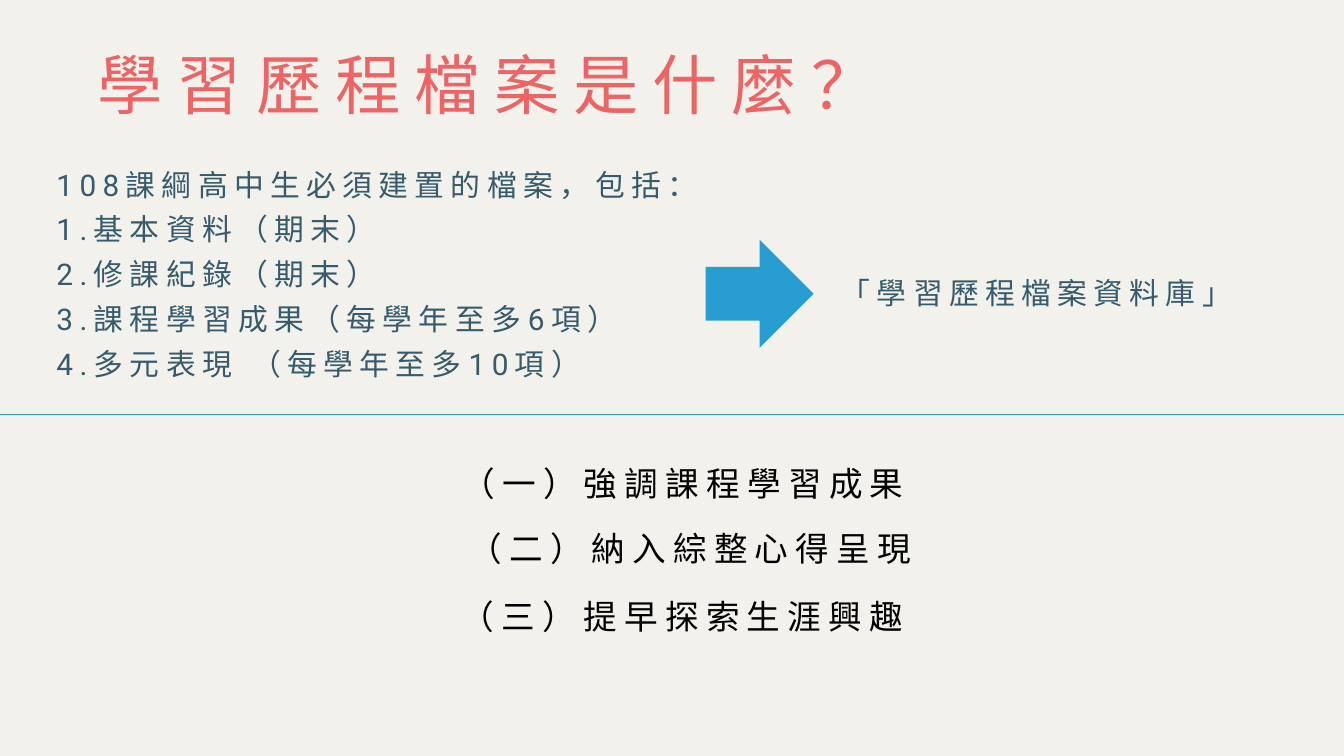
from dataclasses import dataclass

from lxml import etree
from pptx import Presentation
from pptx.dml.color import RGBColor
from pptx.enum.shapes import MSO_CONNECTOR, MSO_SHAPE
from pptx.enum.text import PP_ALIGN
from pptx.oxml.ns import qn
from pptx.slide import Slide
from pptx.util import Inches, Pt

LEFT = PP_ALIGN.LEFT
CENTER = PP_ALIGN.CENTER
RIGHT_ARROW = MSO_SHAPE.RIGHT_ARROW
STRAIGHT = MSO_CONNECTOR.STRAIGHT

COLORS = {
    "background": "F2F1EC",
    "title": "EE6363",
    "accent": "289DD2",
    "body": "365B6D",
    "goal": "000000",
}
SLIDE_WIDTH = 13.33
DIVIDER_TOP = 4.11


@dataclass(frozen=True)
class TextStyle:
    size: float
    color: str
    tracking: float
    line_height: float
    font: str = "Calibri"
    align: PP_ALIGN = LEFT


@dataclass(frozen=True)
class TextBlock:
    left: float
    top: float
    width: float
    height: float
    style: TextStyle
    lines: tuple[str, ...]


TITLE = TextStyle(46.6, "title", 10.1, 56)
FILES = TextStyle(21.3, "body", 4.6, 32, font="Roboto")
DATABASE = TextStyle(21.3, "body", 4.6, 32)
GOAL = TextStyle(24, "goal", 5.2, 33.6, align=CENTER)

BLOCKS = (
    TextBlock(0.97, 0.44, 9.17, 1.55, TITLE, ("學習歷程檔案是什麼？",)),
    TextBlock(0.56, 1.56, 12.2, 2.21, FILES, (
        "108課綱高中生必須建置的檔案，包括：",
        "1.基本資料（期末）",
        "2.修課紀錄（期末）",
        "3.課程學習成果（每學年至多6項）",
        "4.多元表現 （每學年至多10項）",
    )),
    TextBlock(8.34, 2.64, 4.43, 0.41, DATABASE, ("「學習歷程檔案資料庫」",)),
    TextBlock(3.89, 4.53, 5.76, 0.44, GOAL, ("（一）強調課程學習成果",)),
    TextBlock(3.56, 5.17, 6.57, 0.44, GOAL, ("（二）納入綜整心得呈現",)),
    TextBlock(3.58, 5.85, 6.37, 0.44, GOAL, ("（三）提早探索生涯興趣",)),
)


def rgb(color: str) -> RGBColor:
    return RGBColor.from_string(COLORS[color])


def add_text(slide: Slide, block: TextBlock) -> None:
    box = slide.shapes.add_textbox(
        Inches(block.left), Inches(block.top), Inches(block.width), Inches(block.height)
    )
    frame = box.text_frame
    frame.word_wrap = True
    frame.margin_left = frame.margin_right = frame.margin_top = frame.margin_bottom = 0
    frame.text = "\n".join(block.lines)
    style = block.style
    for paragraph in frame.paragraphs:
        paragraph.alignment = style.align
        paragraph.line_spacing = Pt(style.line_height)
        paragraph.font.name = style.font
        paragraph.font.size = Pt(style.size)
        paragraph.font.color.rgb = rgb(style.color)
        defaults = paragraph._p.pPr.find(qn("a:defRPr"))
        defaults.set("spc", str(round(style.tracking * 100)))


def add_divider(slide: Slide) -> None:
    divider = slide.shapes.add_connector(
        STRAIGHT, 0, Inches(DIVIDER_TOP), Inches(SLIDE_WIDTH), Inches(DIVIDER_TOP)
    )
    divider.line.color.rgb = rgb("accent")
    divider.line.width = Pt(0.75)
    etree.SubElement(divider._element.spPr, qn("a:effectLst"))


def add_arrow(slide: Slide) -> None:
    arrow = slide.shapes.add_shape(
        RIGHT_ARROW, Inches(7), Inches(2.38), Inches(1.07), Inches(1.07)
    )
    arrow.shadow.inherit = False
    arrow.fill.solid()
    arrow.fill.fore_color.rgb = rgb("accent")
    arrow.line.fill.background()


def main() -> None:
    deck = Presentation()
    deck.slide_width = Inches(SLIDE_WIDTH)
    deck.slide_height = Inches(7.5)
    slide = deck.slides.add_slide(deck.slide_layouts[6])
    slide.background.fill.solid()
    slide.background.fill.fore_color.rgb = rgb("background")
    add_divider(slide)
    add_arrow(slide)
    for block in BLOCKS:
        add_text(slide, block)
    deck.save("out.pptx")


if __name__ == "__main__":
    main()
